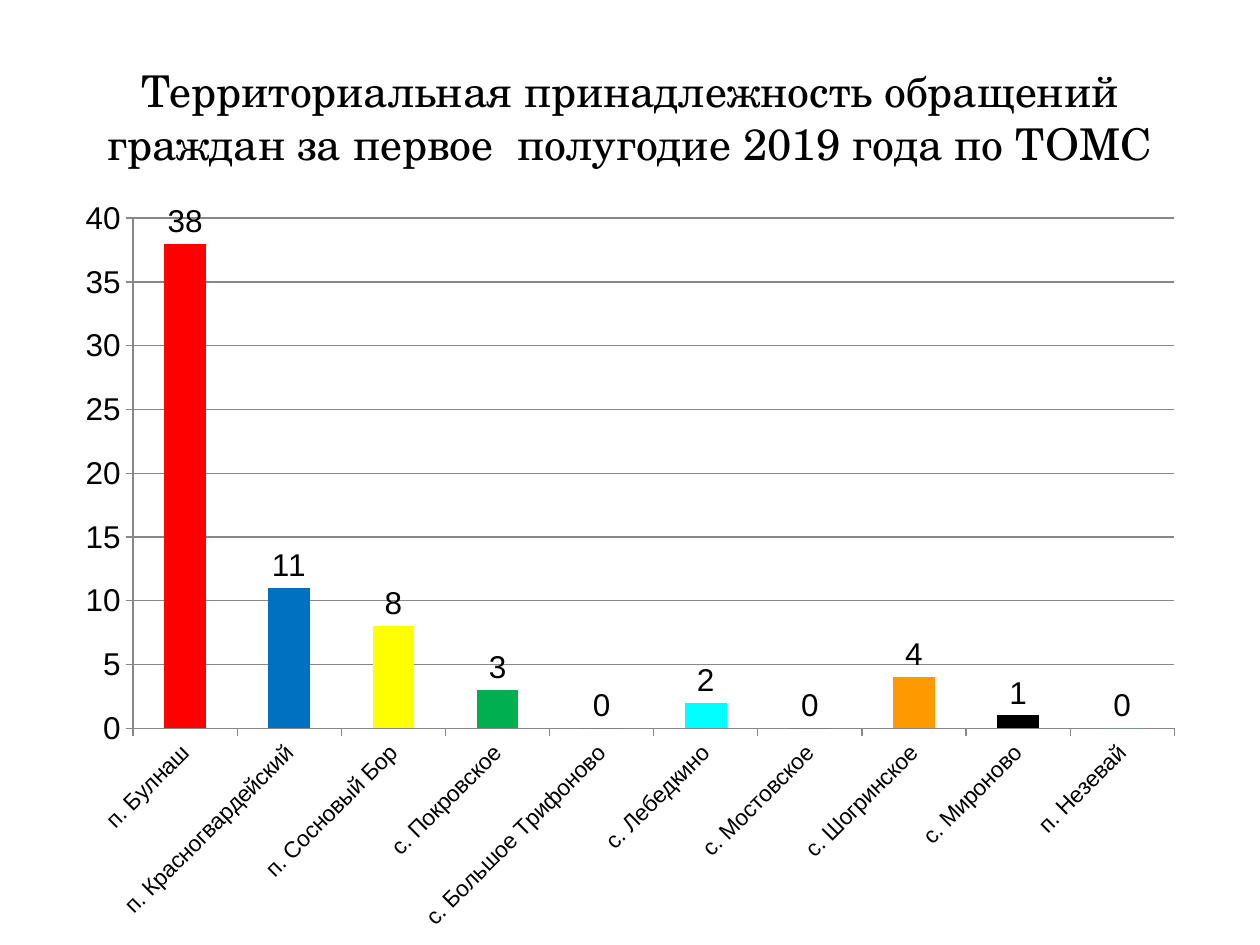
from pptx import Presentation
from pptx.chart.data import CategoryChartData
from pptx.dml.color import RGBColor
from pptx.enum.chart import XL_CHART_TYPE, XL_LABEL_POSITION, XL_TICK_MARK
from pptx.enum.text import MSO_ANCHOR, PP_ALIGN
from pptx.util import Inches, Pt

COLUMNS = XL_CHART_TYPE.COLUMN_CLUSTERED
OUTSIDE_END = XL_LABEL_POSITION.OUTSIDE_END
TICK_OUT, TICK_NONE = XL_TICK_MARK.OUTSIDE, XL_TICK_MARK.NONE
MIDDLE, CENTER = MSO_ANCHOR.MIDDLE, PP_ALIGN.CENTER
TITLE_ONLY = 5

COLORS = {
    "text": "000000", "line": "878787", "background": "FFFFFF",
    "red": "FF0000", "blue": "0070C0", "yellow": "FFFF00", "green": "00B050",
    "purple": "7030A0", "cyan": "00FFFF", "indigo": "333399",
    "orange": "FF9900", "black": "000000", "aqua": "00FFCC",
}
APPEALS = [
    ("п. Булнаш", 38, "red"),
    (" п. Красногвардейский", 11, "blue"),
    ("п. Сосновый Бор", 8, "yellow"),
    ("с. Покровское", 3, "green"),
    ("с. Большое Трифоново", 0, "purple"),
    ("с. Лебедкино", 2, "cyan"),
    ("с. Мостовское", 0, "indigo"),
    ("с. Шогринское", 4, "orange"),
    ("с. Мироново", 1, "black"),
    ("п. Незевай", 0, "aqua"),
]


def rgb(name):
    """Return the named colour."""
    return RGBColor.from_string(COLORS[name])


def format_font(font, size, face="Arial", color="text"):
    """Set the size, face and colour of a font."""
    font.size, font.name, font.bold = Pt(size), face, False
    font.color.rgb = rgb(color)


def write_text(frame, text, align=CENTER, anchor=MIDDLE, **style):
    """Write one formatted paragraph into a text frame."""
    frame.word_wrap = True
    frame.vertical_anchor = anchor
    para = frame.paragraphs[0]
    para.alignment = align
    span = para.add_run()
    span.text = text
    format_font(span.font, **style)


def place_title(page, left, top, width, height):
    """Place the heading in the title placeholder."""
    title = page.shapes.title
    title.left, title.top, title.width, title.height = left, top, width, height
    write_text(
        title.text_frame,
        "Территориальная принадлежность обращений граждан "
        "за первое  полугодие 2019 года по ТОМС",
        size=25, face="TeX Gyre Schola",
    )


def format_line(line):
    """Give a chart line its thin grey style."""
    line.color.rgb = rgb("line")
    line.width = Pt(0.75)


def format_axes(chart):
    """Style both axes and the gridlines."""
    for axis, size in ((chart.category_axis, 13), (chart.value_axis, 18)):
        axis.major_tick_mark, axis.minor_tick_mark = TICK_OUT, TICK_NONE
        format_line(axis.format.line)
        format_font(axis.tick_labels.font, size)
    chart.category_axis.has_major_gridlines = False
    text_body = chart.category_axis.tick_labels.font._element.getparent().getparent().getparent()
    text_body.bodyPr.set("rot", str(-45 * 60000))
    value_axis = chart.value_axis
    value_axis.minimum_scale, value_axis.maximum_scale = 0, 40
    value_axis.major_unit = 5
    value_axis.has_major_gridlines = True
    format_line(value_axis.major_gridlines.format.line)


def place_chart(page, left, top, width, height):
    """Place the column chart of appeals by settlement."""
    names, values, fills = zip(*APPEALS)
    data = CategoryChartData()
    data.categories = names
    data.add_series("Series 1", values)
    chart = page.shapes.add_chart(COLUMNS, left, top, width, height, data).chart
    chart.has_legend = chart.has_title = False
    format_font(chart.font, 18)
    format_axes(chart)

    plot = chart.plots[0]
    plot.gap_width, plot.vary_by_categories = 150, False
    plot.has_data_labels = True
    labels = plot.data_labels
    labels.show_value, labels.position = True, OUTSIDE_END
    format_font(labels.font, 18)

    series = plot.series[0]
    series.invert_if_negative = False
    for index, name in enumerate(fills):
        fill = series.points[index].format.fill
        fill.solid()
        fill.fore_color.rgb = rgb(name)


def main():
    """Build and save the deck."""
    deck = Presentation()
    deck.slide_width, deck.slide_height = Inches(10), Inches(7.5)
    page = deck.slides.add_slide(deck.slide_layouts[TITLE_ONLY])
    page.background.fill.solid()
    page.background.fill.fore_color.rgb = rgb("background")
    place_title(page, Inches(0.5), Inches(0.3), Inches(9), Inches(1.25))
    place_chart(page, Inches(0.5), Inches(1.47), Inches(9), Inches(6.03))
    deck.save("out.pptx")


if __name__ == "__main__":
    main()
